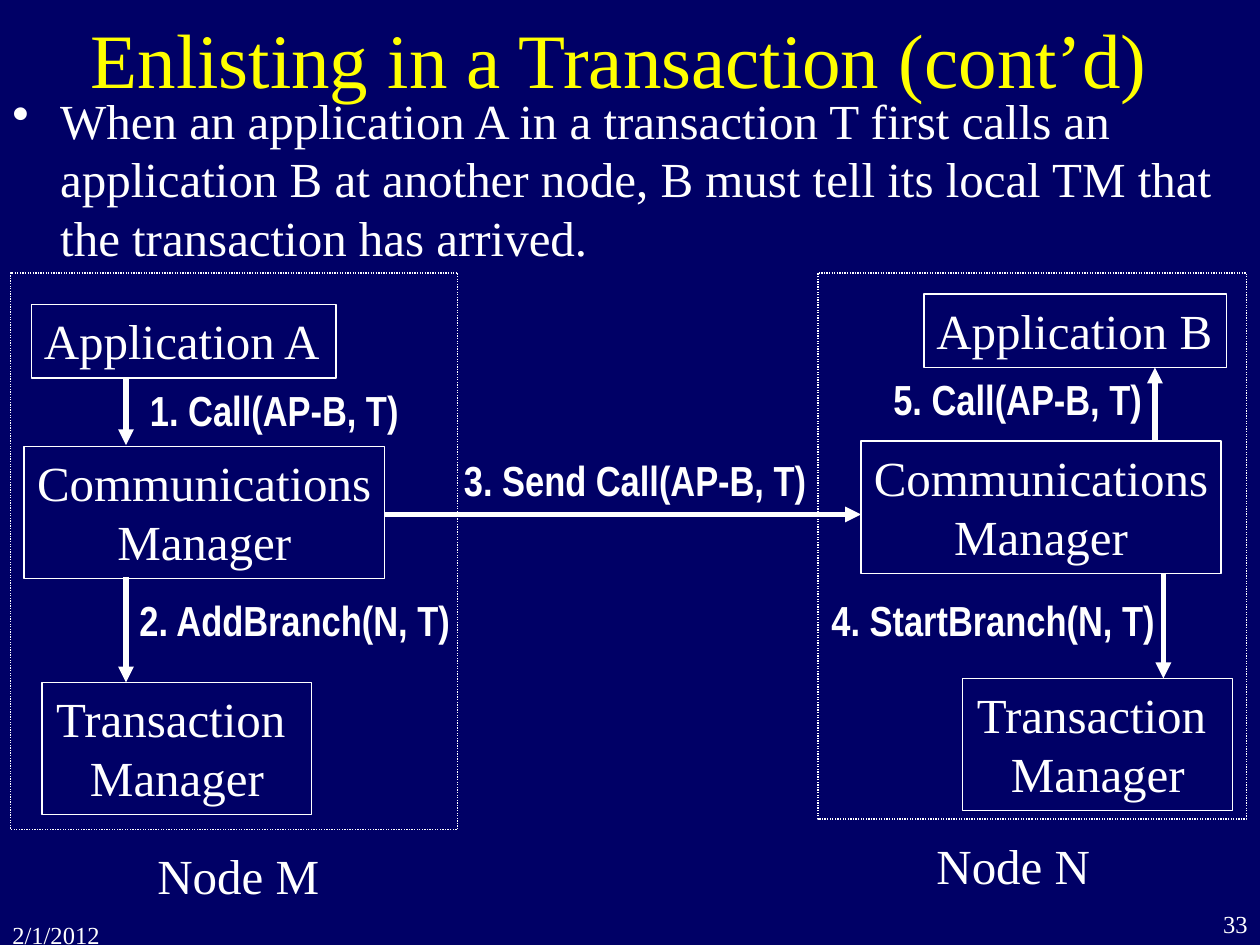
from dataclasses import dataclass

from lxml.etree import SubElement
from pptx import Presentation
from pptx.dml.color import RGBColor
from pptx.enum.dml import MSO_LINE
from pptx.enum.shapes import MSO_CONNECTOR, MSO_SHAPE
from pptx.enum.text import MSO_ANCHOR, MSO_AUTO_SIZE, PP_ALIGN
from pptx.oxml.ns import qn
from pptx.util import Inches, Pt

# The slide is a grid of 120 columns by 90 rows
COLUMNS, ROWS = 120, 90
WIDTH, HEIGHT = Inches(10), Inches(7.5)
NAVY, WHITE, YELLOW = "000066", "FFFFFF", "FFFF00"
SERIF, NARROW = "Times New Roman", "Arial Narrow"

BODY_FONT = {"name": SERIF, "size": Pt(28)}
LABEL_FONT = {"name": NARROW, "size": Pt(24), "bold": True}
TITLE_FONT = {"name": SERIF, "size": Pt(44)}
FOOTER_FONT = {"name": SERIF, "size": Pt(14)}

FITTED = {"auto_size": MSO_AUTO_SIZE.SHAPE_TO_FIT_TEXT, "word_wrap": False}
WRAPPED = {"word_wrap": True}
CENTERED = {"alignment": PP_ALIGN.CENTER}


@dataclass
class Area:
    column: float
    row: float
    columns: float
    rows: float

    def emu(self) -> tuple:
        return (across(self.column), down(self.row),
                across(self.columns), down(self.rows))


@dataclass
class Box:
    lines: list
    area: Area
    paragraph_format: dict
    fill: str = ""


@dataclass
class Label:
    text: str
    area: Area


@dataclass
class Arrow:
    start: tuple
    end: tuple


def across(columns: float) -> int:
    return round(WIDTH * columns / COLUMNS)


def down(rows: float) -> int:
    return round(HEIGHT * rows / ROWS)


def color(hex_value: str) -> RGBColor:
    return RGBColor.from_string(hex_value)


def apply(target, values: dict) -> None:
    for name, value in values.items():
        setattr(target, name, value)


def write(shape, lines: list, font: dict, frame_format: dict,
          paragraph_format: dict, text_color: str = WHITE) -> None:
    frame = shape.text_frame
    apply(frame, frame_format)
    for index, line in enumerate(lines):
        paragraph = frame.add_paragraph() if index else frame.paragraphs[0]
        apply(paragraph, paragraph_format)
        run = paragraph.add_run()
        run.text = line
        apply(run.font, font)
        run.font.color.rgb = color(text_color)


def add_text(slide, text: str, area: Area, font: dict, frame_format: dict,
             paragraph_format: dict, text_color: str = WHITE):
    shape = slide.shapes.add_textbox(*area.emu())
    write(shape, [text], font, frame_format, paragraph_format, text_color)
    return shape


def add_rectangle(slide, area: Area, fill: str = ""):
    shape = slide.shapes.add_shape(MSO_SHAPE.RECTANGLE, *area.emu())
    shape.shadow.inherit = False
    if fill:
        shape.fill.solid()
        shape.fill.fore_color.rgb = color(fill)
    else:
        shape.fill.background()
    shape.line.color.rgb = color(WHITE)
    shape.line.width = Pt(0.75)
    return shape


def add_box(slide, box: Box) -> None:
    shape = add_rectangle(slide, box.area, box.fill)
    frame_format = FITTED | {"vertical_anchor": MSO_ANCHOR.TOP}
    write(shape, box.lines, BODY_FONT, frame_format, box.paragraph_format)


def add_arrow(slide, arrow: Arrow) -> None:
    (x1, y1), (x2, y2) = arrow.start, arrow.end
    connector = slide.shapes.add_connector(
        MSO_CONNECTOR.STRAIGHT, across(x1), down(y1), across(x2), down(y2))
    connector.line.color.rgb = color(WHITE)
    connector.line.width = Pt(3)
    SubElement(connector.line._get_or_add_ln(), qn("a:tailEnd"), type="triangle")
    SubElement(connector._element.spPr, qn("a:effectLst"))


def add_bullet(paragraph) -> None:
    properties = paragraph._p.get_or_add_pPr()
    properties.set("marL", str(Inches(0.38)))
    properties.set("indent", str(-Inches(0.38)))
    SubElement(properties, qn("a:buChar"), char="•")


def application(name: str, area: Area) -> Box:
    return Box([f"Application {name}"], area, {"alignment": PP_ALIGN.LEFT})


def communications(column: float, row: float) -> Box:
    return Box(["Communications", "Manager"], Area(column, row, 34.3, 12.6),
               CENTERED, NAVY)


def transactions(column: float, row: float) -> Box:
    return Box(["Transaction ", "Manager"], Area(column, row, 25.7, 12.6), CENTERED)


BOXES = [
    transactions(4, 65),
    communications(2.3, 42.5),
    application("A", Area(3, 29, 29, 7)),
    transactions(91.7, 64.6),
    communications(82, 42),
    application("B", Area(88, 28, 28.8, 7)),
]
CALLS = [
    Label("1. Call(AP-B, T)", Area(13.1, 36, 26.2, 6)),
    Label("2. AddBranch(N, T)", Area(12.1, 56, 32.2, 6)),
    Label("3. Send Call(AP-B, T)", Area(43, 42.7, 35, 6)),
    Label("4. StartBranch(N, T)", Area(78, 56, 33.2, 6)),
    Label("5. Call(AP-B, T)", Area(83.9, 35, 26.2, 6)),
]
ARROWS = [
    Arrow((12, 36), (12, 42.4)),
    Arrow((12, 55), (12, 65)),
    Arrow((36.6, 49), (82, 49)),
    Arrow((110.8, 54.6), (110.8, 64.6)),
    Arrow((110, 42), (110, 35)),
]
NODE_FRAMES = [Area(1, 26, 42.6, 53), Area(77.9, 26, 40.8, 52)]
NODE_NAMES = [
    Label("Node M", Area(13.8, 79.9, 17.9, 6.8)),
    Label("Node N", Area(88, 79, 17.9, 6.8)),
]


def main() -> None:
    presentation = Presentation()
    presentation.slide_width, presentation.slide_height = WIDTH, HEIGHT
    slide = presentation.slides.add_slide(presentation.slide_layouts[6])
    slide.background.fill.solid()
    slide.background.fill.fore_color.rgb = color(NAVY)

    # Footer
    add_text(slide, "2/1/2012", Area(0, 87, 12, 3), FOOTER_FONT, WRAPPED, {})
    add_text(slide, "33", Area(109, 86, 11, 4), FOOTER_FONT, WRAPPED,
             {"alignment": PP_ALIGN.RIGHT})

    # Title and bullet
    add_text(slide, "Enlisting in a Transaction (cont’d)", Area(6, 0, 106, 11),
             TITLE_FONT, WRAPPED | {"vertical_anchor": MSO_ANCHOR.MIDDLE},
             CENTERED, YELLOW)
    body = add_text(
        slide,
        "When an application A in a transaction T first calls an application B "
        "at another node, B must tell its local TM that the transaction has arrived.",
        Area(0, 8, 120, 18), BODY_FONT, WRAPPED, {"space_before": Pt(5.6)})
    add_bullet(body.text_frame.paragraphs[0])

    # Components and the calls between them
    for box in BOXES:
        add_box(slide, box)
    for call in CALLS:
        add_text(slide, call.text, call.area, LABEL_FONT, FITTED, {})
    for arrow in ARROWS:
        add_arrow(slide, arrow)

    # Node frames and names
    for area in NODE_FRAMES:
        add_rectangle(slide, area).line.dash_style = MSO_LINE.ROUND_DOT
    for name in NODE_NAMES:
        add_text(slide, name.text, name.area, BODY_FONT,
                 FITTED | WRAPPED, {})

    presentation.save("out.pptx")


if __name__ == "__main__":
    main()
